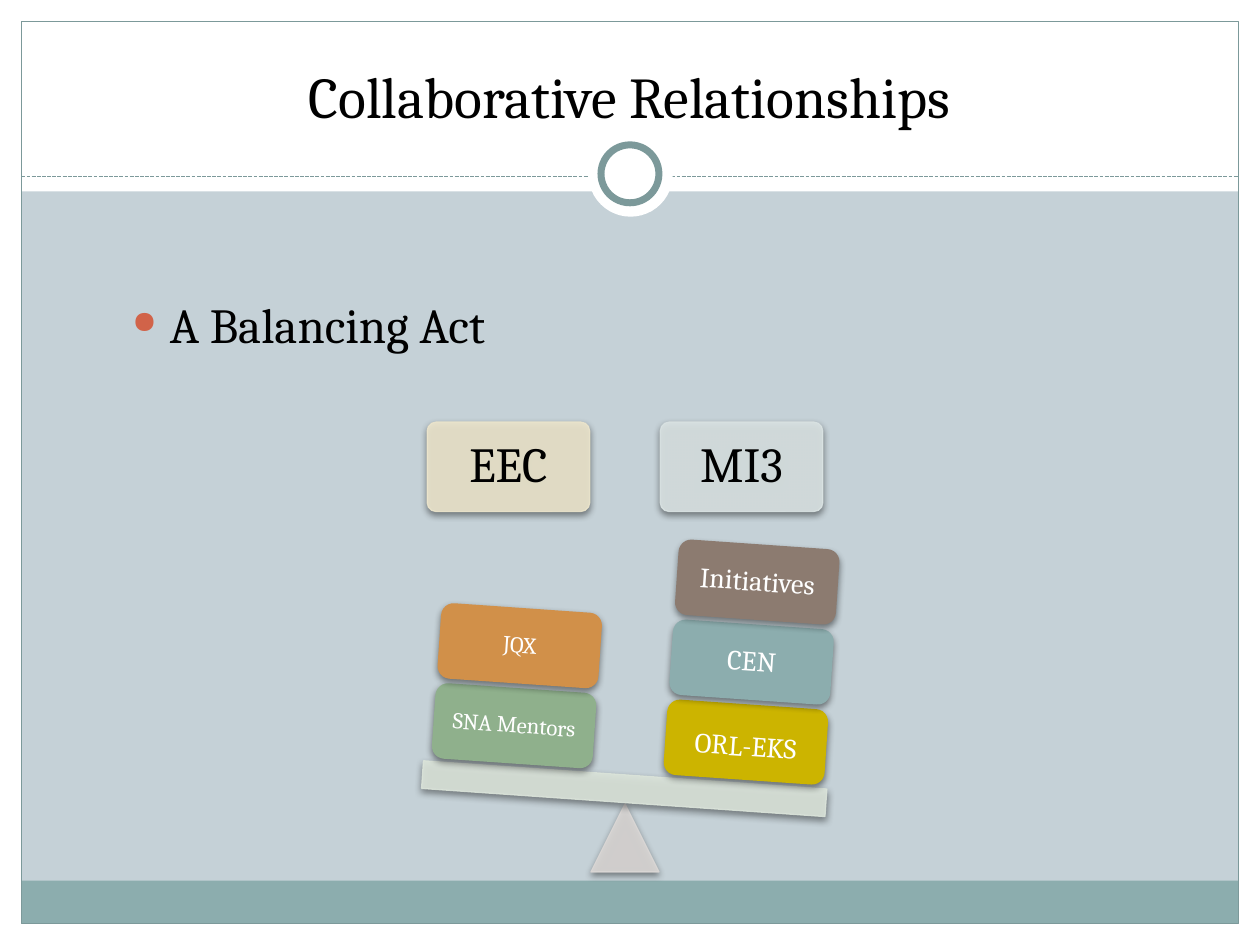
from pptx import Presentation
from pptx.dml.color import RGBColor
from pptx.enum.dml import MSO_LINE
from pptx.enum.shapes import MSO_CONNECTOR, MSO_SHAPE as SHAPE
from pptx.enum.text import MSO_ANCHOR as ANCHOR, PP_ALIGN as ALIGN
from pptx.oxml import parse_xml
from pptx.oxml.ns import nsdecls, qn
from pptx.util import Inches, Pt

FONT = "Cambria"
TILT = 4
SLATE = "7C999A"


def rgb(value):
    return RGBColor.from_string(value)


def add_xml(parent, xml):
    tag, rest = xml.split(" ", 1)
    parent.append(parse_xml(f"{tag} {nsdecls('a')} {rest}"))


def add_shape(slide, kind, box, fill=None, line=None, width=0.75):
    sp = slide.shapes.add_shape(kind, *map(Inches, box))
    sp.shadow.inherit = False
    if fill:
        sp.fill.solid()
        sp.fill.fore_color.rgb = rgb(fill)
    else:
        sp.fill.background()
    if line:
        sp.line.color.rgb = rgb(line)
        sp.line.width = Pt(width)
    else:
        sp.line.fill.background()
    return sp


def add_shadow(sp):
    effects = sp._element.spPr.find(qn("a:effectLst"))
    add_xml(effects, '<a:outerShdw blurRad="50800" dist="25400" dir="5400000" rotWithShape="0">'
                     '<a:srgbClr val="000000"><a:alpha val="45000"/></a:srgbClr></a:outerShdw>')


def add_translucent(slide, kind, box, color):
    sp = add_shape(slide, kind, box, color, color)
    for clr in sp._element.spPr.iter(qn("a:srgbClr")):
        add_xml(clr, '<a:alpha val="90000"/>')
    add_shadow(sp)
    return sp


def set_text(sp, text, size, color="000000", align=ALIGN.CENTER, anchor=ANCHOR.MIDDLE):
    tf = sp.text_frame
    tf.word_wrap = True
    tf.vertical_anchor = anchor
    p = tf.paragraphs[0]
    p.text = text
    p.alignment = align
    p.font.name = FONT
    p.font.size = Pt(size)
    p.font.color.rgb = rgb(color)
    return p


def add_text(slide, box, text, size, **options):
    sp = slide.shapes.add_textbox(*map(Inches, box))
    return set_text(sp, text, size, **options)


def add_bullet(p):
    pPr = p._p.get_or_add_pPr()
    pPr.set("marL", str(Inches(0.3)))
    pPr.set("indent", str(-Inches(0.3)))
    add_xml(pPr, '<a:buClr ><a:srgbClr val="D16349"/></a:buClr>')
    add_xml(pPr, '<a:buSzPct val="64000"/>')
    add_xml(pPr, '<a:buChar char="●"/>')


def add_frame(slide):
    slide.background.fill.solid()
    slide.background.fill.fore_color.rgb = rgb("C5D1D7")
    for box in ((0, 7.33, 10, 0.17), (0, 0, 10, 1.52), (0, 0, 0.17, 7.5), (9.83, 0, 0.17, 7.5)):
        add_shape(slide, SHAPE.RECTANGLE, box, "FFFFFF")
    add_shape(slide, SHAPE.RECTANGLE, (0.17, 6.99, 9.66, 0.34), "8CADAE")
    add_shape(slide, SHAPE.RECTANGLE, (0.17, 0.17, 9.66, 7.16), line=SLATE)
    rule = slide.shapes.add_connector(
        MSO_CONNECTOR.STRAIGHT, Inches(0.17), Inches(1.4), Inches(9.83), Inches(1.4))
    rule.line.color.rgb = rgb(SLATE)
    rule.line.width = Pt(0.75)
    rule.line.dash_style = MSO_LINE.SQUARE_DOT
    add_xml(rule._element.spPr, "<a:effectLst />")
    add_shape(slide, SHAPE.OVAL, (4.67, 1.05, 0.67, 0.67), "FFFFFF")
    add_shape(slide, SHAPE.OVAL, (4.77, 1.15, 0.46, 0.46), "FFFFFF", SLATE, 4)


def add_pan_label(slide, left, text, color):
    sp = add_translucent(slide, SHAPE.ROUNDED_RECTANGLE, (left, 3.35, 1.29, 0.71), color)
    sp.adjustments[0] = 0.1
    p = set_text(sp, text, 28)
    p.line_spacing = 0.9


def add_stack(slide, left, bottom, size, weights):
    for level, (text, color, drop) in enumerate(weights):
        box = (left + 0.045 * level, bottom - 0.635 * level, 1.28, 0.6)
        sp = add_shape(slide, SHAPE.ROUNDED_RECTANGLE, box, color)
        sp.rotation = TILT
        add_shadow(sp)
        p = set_text(sp, text, size, "FFFFFF")
        p.line_spacing = 0.9
        tf = sp.text_frame
        tf.margin_left = tf.margin_right = tf.margin_bottom = Inches(0.05)
        tf.margin_top = Inches(0.05 + drop)


def add_balance(slide):
    add_pan_label(slide, 3.39, "EEC", "ECE5CC")
    add_pan_label(slide, 5.24, "MI3", "DAE3E3")
    add_translucent(slide, SHAPE.ISOSCELES_TRIANGLE, (4.69, 6.38, 0.54, 0.54), "DAD7D5")
    beam = add_translucent(slide, SHAPE.RECTANGLE, (3.35, 6.15, 3.21, 0.22), "DBE4DA")
    beam.rotation = TILT
    add_stack(slide, 5.28, 5.59, 16, (
        ("ORL-EKS", "CCB400", 0.08), ("CEN", "8CADAE", 0), ("Initiatives", "8C7B70", 0)))
    add_stack(slide, 3.44, 5.46, 13, (
        ("SNA Mentors", "8FB08C", 0), ("JQX", "D19049", 0)))


def main():
    prs = Presentation()
    prs.slide_width, prs.slide_height = Inches(10), Inches(7.5)
    slide = prs.slides.add_slide(prs.slide_layouts[6])
    add_frame(slide)
    add_text(slide, (0.33, 0.25, 9.33, 0.83), "Collaborative Relationships", 33,
             anchor=ANCHOR.BOTTOM)
    p = add_text(slide, (0.95, 2.29, 8.1, 1.06), "A Balancing Act", 28,
                 align=ALIGN.LEFT, anchor=ANCHOR.TOP)
    add_bullet(p)
    add_balance(slide)
    prs.save("out.pptx")


if __name__ == "__main__":
    main()
